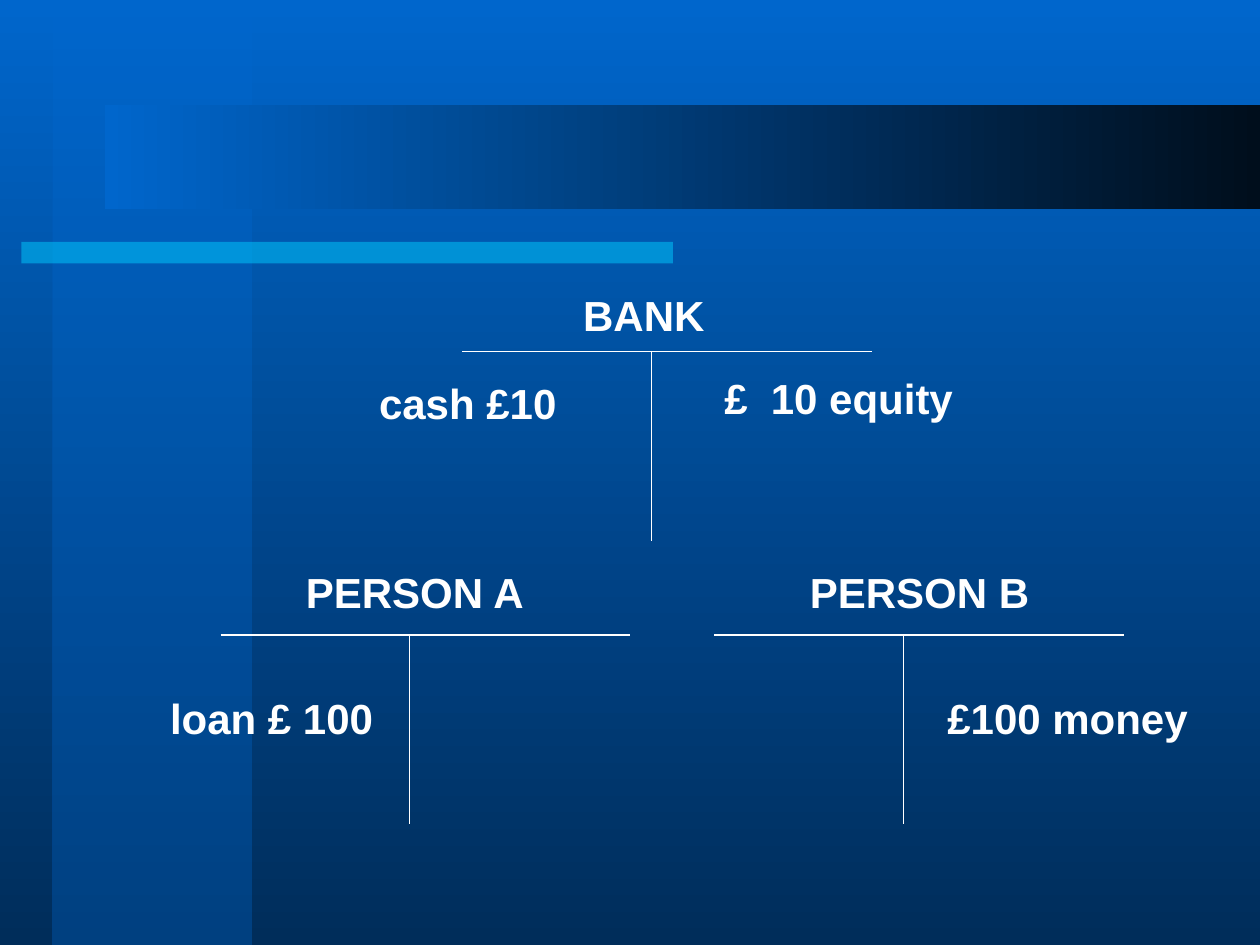
from lxml.etree import SubElement
from pptx import Presentation
from pptx.dml.color import RGBColor
from pptx.enum.shapes import MSO_CONNECTOR, MSO_SHAPE
from pptx.enum.text import MSO_ANCHOR, MSO_AUTO_SIZE, PP_ALIGN
from pptx.oxml.ns import qn
from pptx.util import Inches, Pt

BLUE, NAVY, WHITE = "0066CC", "002D5A", "FFFFFF"
DOWN, ACROSS = 270, 0

BANDS = [
    ((0.42, 0, 1.58, 7.5), (BLUE, "0053A6"), DOWN, 50),
    ((0.17, 1.92, 5.17, 0.17), ("00CCFF",), None, 50),
    ((0.83, 0.83, 9.17, 0.83), (BLUE, "000E1C"), ACROSS, 100),
]

ACCOUNTS = [
    {"corner": (3.67, 2.79), "entries": [
        ("BANK", (4.53, 2.25, 1.17), PP_ALIGN.LEFT),
        ("cash £10", (2.91, 2.95, 1.62), PP_ALIGN.LEFT),
        ("£  10 equity", (5.65, 2.91, 2.03), PP_ALIGN.LEFT)]},
    {"corner": (1.75, 5.04), "entries": [
        ("PERSON A", (2.33, 4.45, 1.94), PP_ALIGN.LEFT),
        ("loan £ 100", (1.23, 5.45, 1.83), PP_ALIGN.RIGHT)]},
    {"corner": (5.67, 5.04), "entries": [
        ("PERSON B", (6.33, 4.45, 1.94), PP_ALIGN.LEFT),
        ("£100 money", (7.42, 5.45, 2.11), PP_ALIGN.LEFT)]},
]
BAR_WIDTH, STEM_OFFSET, STEM_HEIGHT, ENTRY_HEIGHT = 3.25, 1.5, 1.5, 0.5


def color(value):
    return RGBColor.from_string(value)


def paint(fill, colors, angle):
    if len(colors) == 1:
        fill.solid()
        fill.fore_color.rgb = color(colors[0])
        return
    fill.gradient()
    fill.gradient_angle = angle
    for stop, value in zip(fill.gradient_stops, colors):
        stop.color.rgb = color(value)


def add_band(slide, box, colors, angle, opacity):
    band = slide.shapes.add_shape(MSO_SHAPE.RECTANGLE, *map(Inches, box))
    band.shadow.inherit = False
    band.line.fill.background()
    paint(band.fill, colors, angle)
    if opacity < 100:
        for tint in band._element.spPr.iter(qn("a:srgbClr")):
            SubElement(tint, qn("a:alpha"), val=str(opacity * 1000))


def add_rule(slide, start, end):
    rule = slide.shapes.add_connector(
        MSO_CONNECTOR.STRAIGHT, *map(Inches, (*start, *end)))
    rule.line.color.rgb = color(WHITE)
    rule.line.width = Pt(0.75)
    SubElement(rule._element.spPr, qn("a:effectLst"))


def add_entry(slide, text, place, alignment):
    entry = slide.shapes.add_textbox(*map(Inches, (*place, ENTRY_HEIGHT)))
    frame = entry.text_frame
    frame.word_wrap = False
    frame.auto_size = MSO_AUTO_SIZE.SHAPE_TO_FIT_TEXT
    frame.vertical_anchor = MSO_ANCHOR.TOP
    paragraph = frame.paragraphs[0]
    paragraph.text = text
    paragraph.alignment = alignment
    paragraph.font.name = "Arial"
    paragraph.font.size = Pt(24)
    paragraph.font.bold = True
    paragraph.font.color.rgb = color(WHITE)


def main():
    deck = Presentation()
    deck.slide_width, deck.slide_height = Inches(10), Inches(7.5)
    slide = deck.slides.add_slide(deck.slide_layouts[6])
    paint(slide.background.fill, (BLUE, NAVY), DOWN)
    for band in BANDS:
        add_band(slide, *band)
    for account in ACCOUNTS:
        left, top = account["corner"]
        stem = left + STEM_OFFSET
        add_rule(slide, (left, top), (left + BAR_WIDTH, top))
        add_rule(slide, (stem, top), (stem, top + STEM_HEIGHT))
        for entry in account["entries"]:
            add_entry(slide, *entry)
    deck.save("out.pptx")


if __name__ == "__main__":
    main()
